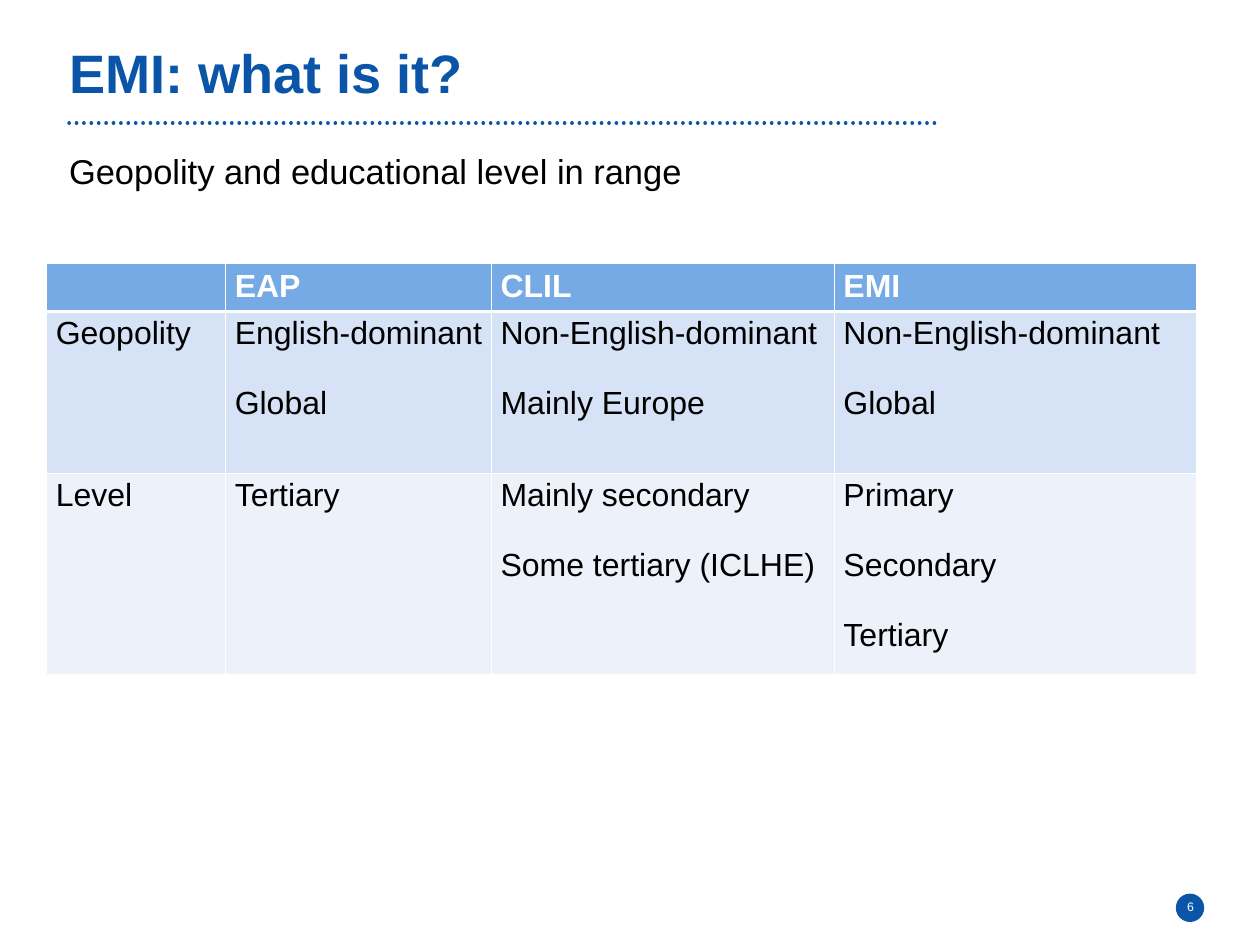
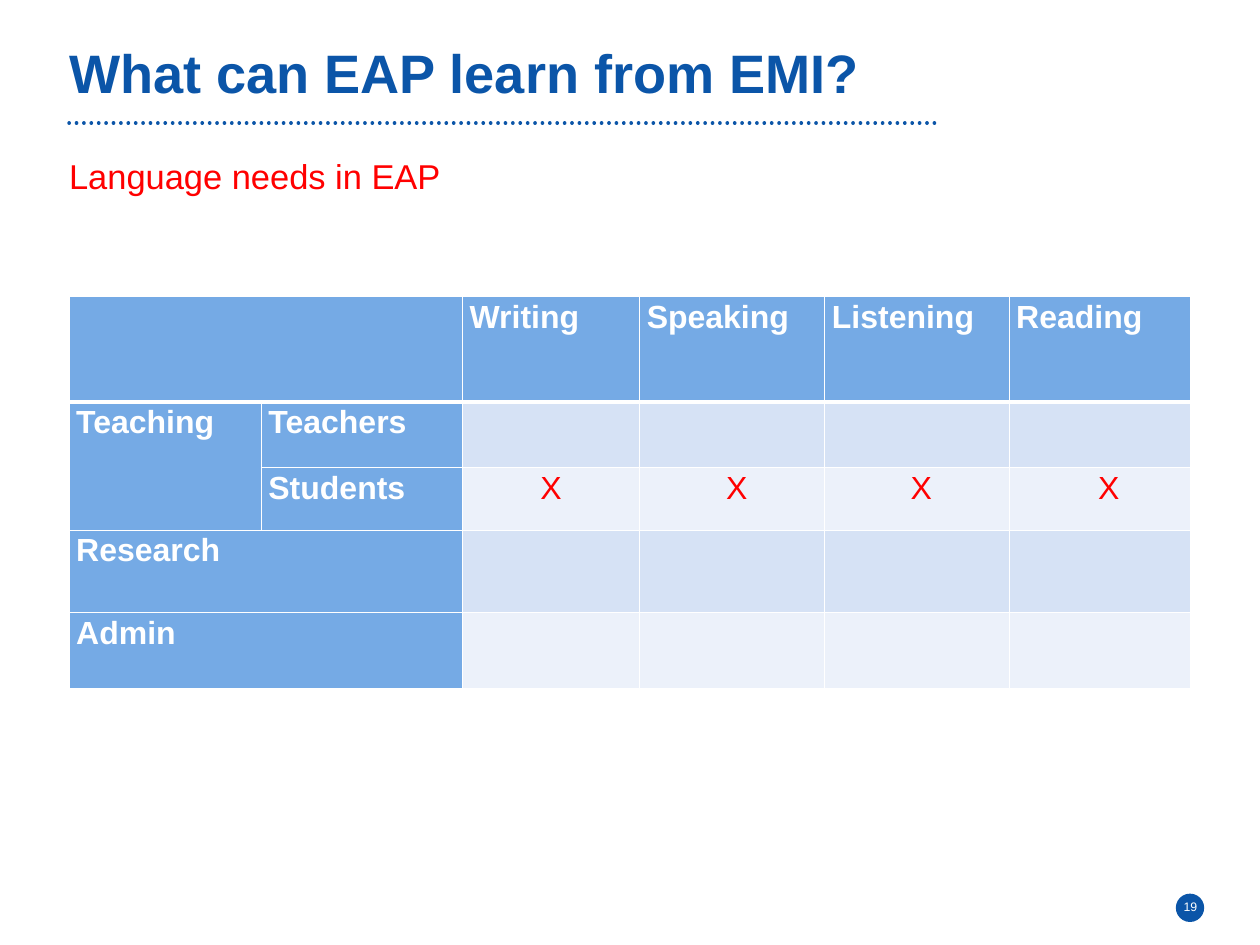
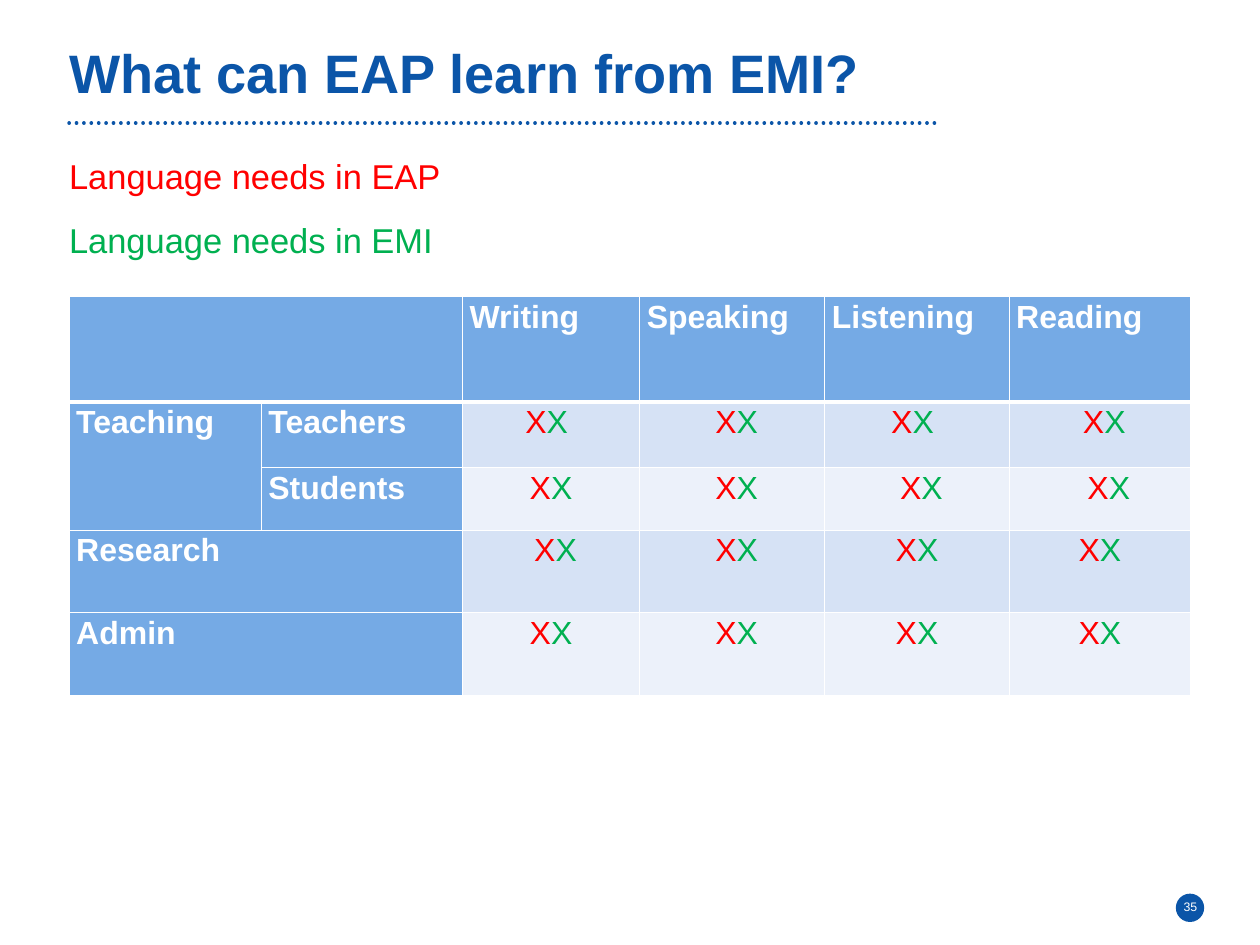
import lxml.etree
import pptx
import pptx.dml.color
import pptx.enum.dml
import pptx.enum.shapes
import pptx.enum.text
import pptx.oxml.ns
import pptx.util

Inches, Pt = pptx.util.Inches, pptx.util.Pt
ALIGN, ANCHOR = pptx.enum.text.PP_ALIGN, pptx.enum.text.MSO_ANCHOR
AUTO_SIZE = pptx.enum.text.MSO_AUTO_SIZE
qn = pptx.oxml.ns.qn

NAVY, HEADER, BANDS = "0B55A8", "75AAE5", ("D6E2F5", "ECF1FA")
BLACK, WHITE, RED, GREEN = "000000", "FFFFFF", "FF0000", "00B050"
MARGIN, TEXT_WIDTH = 0.78, 10.4
MARK_SHIFT = 0.1


def rgb(value):
    return pptx.dml.color.RGBColor.from_string(value)


def add_span(para, text, size, color, bold=False):
    span = para.add_run()
    span.text = text
    span.font.name = "Arial"
    span.font.size = Pt(size)
    span.font.bold = bold
    span.font.color.rgb = rgb(color)


# In table rows a string is text, one paragraph a line; a number stands for
# the page's marks, moved sideways by that many steps.
RANGE_TABLE = dict(
    left=0.53, top=2.98, insets=(0.1, 0.05), spacing=1.0, stub=0, merges=[],
    widths=[2.02, 3, 3.87, 4.08], heights=[0.53, 1.83, 2.27],
    rows=[
        ["", "EAP", "CLIL", "EMI"],
        ["Geopolity", "English-dominant\nGlobal",
         "Non-English-dominant\nMainly Europe", "Non-English-dominant\nGlobal"],
        ["Level", "Tertiary", "Mainly secondary\nSome tertiary (ICLHE)",
         "Primary\nSecondary\nTertiary"],
    ])
SKILLS = ["", "", "Writing", "Speaking", "Listening", "Reading"]
NEEDS_TABLE = dict(
    left=MARGIN, top=3.35, insets=(0.08, 0), spacing=1.07, stub=2,
    merges=[(0, 0, 0, 1), (1, 0, 2, 0), (3, 0, 3, 1), (4, 0, 4, 1)],
    widths=[2.17, 2.27, 2, 2.09, 2.08, 2.05])
BLANK = [""] * 4
EAP_TABLE = dict(
    NEEDS_TABLE, heights=[1.19, 0.74, 0.71, 0.93, 0.86],
    rows=[
        SKILLS,
        ["Teaching", "Teachers", *BLANK],
        ["", "Students", 0, 1, 1, 2],
        ["Research", "", *BLANK],
        ["Admin", "", *BLANK],
    ])
EMI_TABLE = dict(
    NEEDS_TABLE, heights=[1.19, 0.74, 0.71, 0.93, 0.93],
    rows=[
        SKILLS,
        ["Teaching", "Teachers", -1, 1, -1, 1],
        ["", "Students", 0, 1, 1, 2],
        ["Research", "", 1, 1, 0, 0],
        ["Admin", "", 0, 1, 0, 0],
    ])

LEARN = "What can EAP learn from EMI?"
EAP_LINE = ("Language needs in EAP", RED)
EMI_LINE = ("Language needs in EMI", GREEN)
PAGES = [
    ("6", "EMI: what is it?", 1.69,
     [("Geopolity and educational level in range", BLACK)], RANGE_TABLE),
    ("19", LEARN, 1.75, [EAP_LINE], EAP_TABLE),
    ("35", LEARN, 1.75, [EAP_LINE, EMI_LINE], EMI_TABLE),
]

deck = pptx.Presentation()
deck.slide_width, deck.slide_height = Inches(14.22), Inches(10.67)

for number, title, lines_top, lines, plan in PAGES:
    page = deck.slides.add_slide(deck.slide_layouts[0])

    # Page number and dotted rule
    disc = page.shapes.add_shape(
        pptx.enum.shapes.MSO_SHAPE.OVAL,
        Inches(13.27), Inches(10.09), Inches(0.32), Inches(0.32))
    disc.shadow.inherit = False
    disc.fill.solid()
    disc.fill.fore_color.rgb = rgb(NAVY)
    disc.line.fill.background()

    rule = page.shapes.add_connector(
        pptx.enum.shapes.MSO_CONNECTOR.STRAIGHT,
        Inches(MARGIN), Inches(1.39), Inches(10.62), Inches(1.39))
    rule.line.color.rgb = rgb(NAVY)
    rule.line.width = Pt(3)
    rule.line.dash_style = pptx.enum.dml.MSO_LINE.ROUND_DOT
    rule.get_or_add_ln().set("cap", "rnd")
    lxml.etree.SubElement(rule._element.spPr, qn("a:effectLst"))

    number_box = page.shapes.add_textbox(
        Inches(13.16), Inches(9.95), Inches(0.55), Inches(0.57))
    frame = number_box.text_frame
    frame.word_wrap = True
    frame.vertical_anchor = ANCHOR.MIDDLE
    frame.margin_left = frame.margin_right = Inches(0.14)
    frame.margin_top = frame.margin_bottom = Inches(0.07)
    frame.paragraphs[0].alignment = ALIGN.CENTER
    add_span(frame.paragraphs[0], number, 10, WHITE)

    # Title and the lines below it
    heading = page.shapes.title
    texts = [(heading, 0.46, 0.9, title, 44, NAVY)]
    for index, (line, color) in enumerate(lines):
        box = page.placeholders[1] if index == 0 else page.shapes.add_textbox(0, 0, 0, 0)
        texts.append((box, lines_top + index * 0.72, 0.47, line, 28, color))
    for box, top, height, text, size, color in texts:
        box.left, box.top = Inches(MARGIN), Inches(top)
        box.width, box.height = Inches(TEXT_WIDTH), Inches(height)
        frame = box.text_frame
        frame.word_wrap = True
        frame.auto_size = AUTO_SIZE.NONE if box is heading else AUTO_SIZE.SHAPE_TO_FIT_TEXT
        frame.vertical_anchor = ANCHOR.TOP
        frame.margin_left = frame.margin_right = 0
        frame.margin_top = frame.margin_bottom = 0
        para = frame.paragraphs[0]
        para.alignment = ALIGN.LEFT
        para.space_before = Pt(0)
        if box is heading:
            para.line_spacing = Pt(52)
        add_span(para, text, size, color, bold=box is heading)

    # Table
    rows, widths, heights = plan["rows"], plan["widths"], plan["heights"]
    table = page.shapes.add_table(
        len(rows), len(widths), Inches(plan["left"]), Inches(plan["top"]),
        Inches(sum(widths)), Inches(sum(heights))).table
    table.horz_banding = False
    for column, width in zip(table.columns, widths):
        column.width = Inches(width)
    for row, height in zip(table.rows, heights):
        row.height = Inches(height)
    for top, left, bottom, right in plan["merges"]:
        table.cell(top, left).merge(table.cell(bottom, right))

    side, edge = plan["insets"]
    for r, row in enumerate(rows):
        for c, content in enumerate(row):
            cell = table.cell(r, c)
            is_label = r == 0 or c < plan["stub"]
            is_mark = isinstance(content, int)
            shift = content * MARK_SHIFT if is_mark else 0
            cell.margin_left = Inches(side + max(shift, 0))
            cell.margin_right = Inches(side + max(-shift, 0))
            cell.margin_top = cell.margin_bottom = Inches(edge)
            cell.fill.solid()
            cell.fill.fore_color.rgb = rgb(HEADER if is_label else BANDS[(r - 1) % 2])

            borders = [("a:lnL", 1), ("a:lnR", 1),
                       ("a:lnT", 3 if r == 1 else 1), ("a:lnB", 3 if r == 0 else 1)]
            for position, (tag, weight) in enumerate(borders):
                border = lxml.etree.Element(qn(tag), w=str(Pt(weight)))
                fill = lxml.etree.SubElement(border, qn("a:solidFill"))
                lxml.etree.SubElement(fill, qn("a:srgbClr"), val=WHITE)
                cell._tc.get_or_add_tcPr().insert(position, border)

            if content == "":
                continue
            frame = cell.text_frame
            texts = [""] if is_mark else content.split("\n")
            for index, text in enumerate(texts):
                para = frame.add_paragraph() if index else frame.paragraphs[0]
                para.line_spacing = plan["spacing"]
                if index:
                    para.space_before = Pt(28)
                if is_mark:
                    para.alignment = ALIGN.CENTER
                    for _, color in lines:
                        add_span(para, "X", 26, color)
                else:
                    add_span(para, text, 26, WHITE if is_label else BLACK, is_label)

deck.save("out.pptx")
